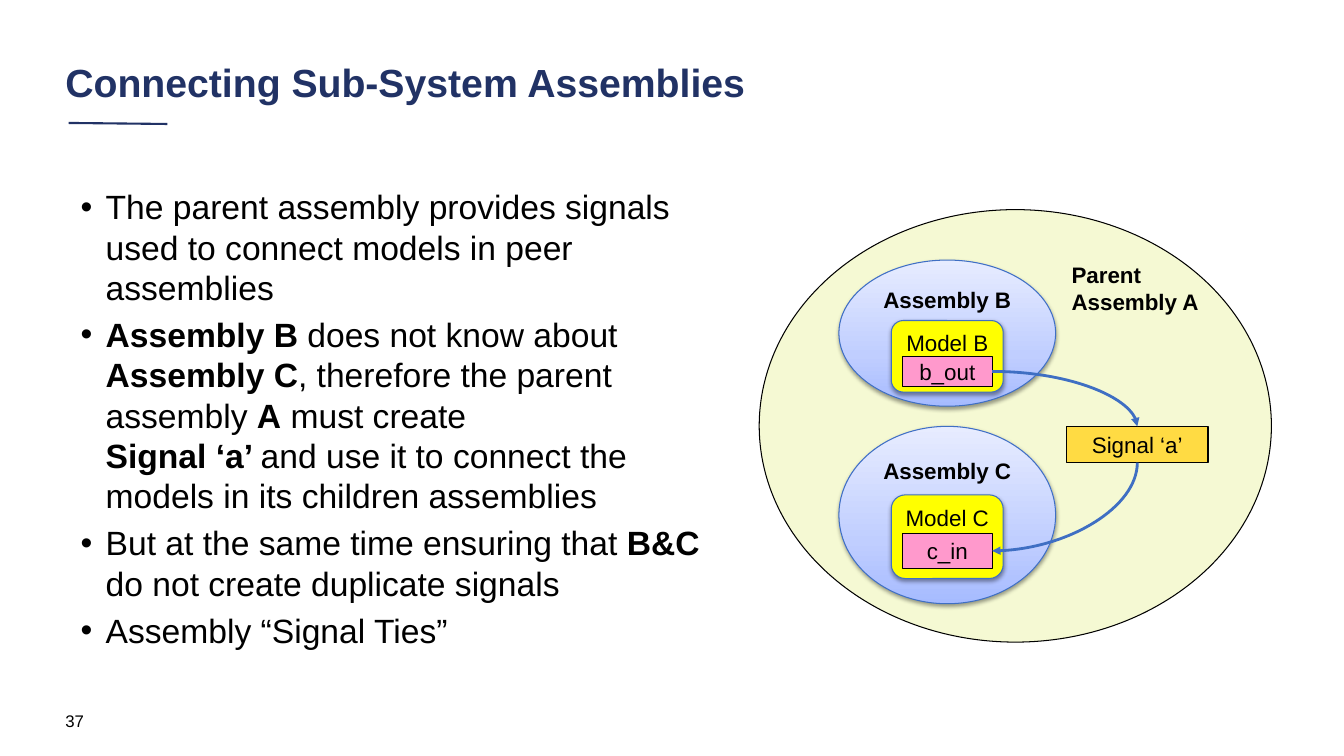
from lxml import etree
from pptx import Presentation
from pptx.dml.color import RGBColor
from pptx.enum import shapes, text
from pptx.oxml import ns
from pptx.util import Inches, Pt

NAVY = RGBColor(0x21, 0x32, 0x65)
BLACK = RGBColor(0, 0, 0)
BLUE = RGBColor(0x3F, 0x6F, 0xC3)
CREAM = RGBColor(0xF5, 0xF9, 0xD3)
GOLD = RGBColor(0xFF, 0xDB, 0x43)
YELLOW = RGBColor(0xFF, 0xFF, 0)
PINK = RGBColor(0xFF, 0x99, 0xCC)
GRADIENT = ((0, "A6BBFF"), (35, "C0CEFF"), (100, "E7ECFF"))
SHAPE = shapes.MSO_SHAPE
TOP, BOTTOM, RIGHT = 0, 2, 3

# Each bullet is a list of (text, bold) runs; "\n" is a line break
BULLETS = [
    [("The parent assembly provides signals used to connect models in peer assemblies", False)],
    [("Assembly B ", True), ("does not know about ", False), ("Assembly C", True),
     (", therefore the parent assembly ", False), ("A", True), (" must create ", False),
     ("\n", False), ("Signal ‘a’ ", True),
     ("and use it to connect the models in its children assemblies", False)],
    [("But at the same time ensuring that ", False), ("B&C", True),
     (" do not create duplicate signals", False)],
    [("Assembly “Signal Ties”", False)],
]


def add_xml(parent, tag, **attributes):
    return etree.SubElement(parent, ns.qn(tag), attributes)


def set_font(font, **values):
    font.name = "Arial"
    font.color.rgb = values.pop("color", BLACK)
    for name, value in values.items():
        setattr(font, name, value)


def add_text(slide, box, words, anchor=text.MSO_ANCHOR.TOP, **font):
    frame = slide.shapes.add_textbox(*map(Inches, box)).text_frame
    frame.word_wrap = True
    frame.vertical_anchor = anchor
    frame.text = words
    for paragraph in frame.paragraphs:
        set_font(paragraph.font, **font)
    return frame


def add_node(slide, kind, box, fill, line, width, label="",
             anchor=text.MSO_ANCHOR.MIDDLE, bold=False):
    shape = slide.shapes.add_shape(kind, *map(Inches, box))
    shape.shadow.inherit = False
    if fill is not None:
        shape.fill.solid()
        shape.fill.fore_color.rgb = fill
    shape.line.color.rgb = line
    shape.line.width = Pt(width)
    frame = shape.text_frame
    frame.margin_left = frame.margin_right = 0
    frame.word_wrap = True
    frame.vertical_anchor = anchor
    paragraph = frame.paragraphs[0]
    paragraph.alignment = text.PP_ALIGN.CENTER
    paragraph.text = label
    set_font(paragraph.font, size=Pt(16), bold=bold)
    return shape


def add_shadow(shape):
    effects = shape._element.spPr.find(ns.qn("a:effectLst"))
    shadow = add_xml(effects, "a:outerShdw", blurRad=str(Pt(3.1)), dist=str(Pt(1.6)),
                     dir="5400000", rotWithShape="0")
    color = add_xml(shadow, "a:srgbClr", val="000000")
    add_xml(color, "a:alpha", val="38000")


def add_gradient(shape):
    fill = etree.Element(ns.qn("a:gradFill"), rotWithShape="1")
    stops = add_xml(fill, "a:gsLst")
    for position, color in GRADIENT:
        stop = add_xml(stops, "a:gs", pos=str(position * 1000))
        add_xml(stop, "a:srgbClr", val=color)
    add_xml(fill, "a:lin", ang="16200000", scaled="0")
    shape._element.spPr.find(ns.qn("a:prstGeom")).addnext(fill)


def add_line(slide, kind, points, color, width):
    connector = slide.shapes.add_connector(kind, *map(Inches, points))
    connector.line.color.rgb = color
    connector.line.width = Pt(width)
    add_xml(connector._element.spPr, "a:effectLst")
    return connector


def add_signal_curve(slide, port, signal, side, arrow_tag):
    curve = add_line(slide, shapes.MSO_CONNECTOR.CURVE, (0, 0, 1, 1), BLUE, 2)
    curve.begin_connect(port, RIGHT)
    curve.end_connect(signal, side)
    # A quarter bend leaves the port sideways and meets the signal vertically
    properties = curve._element.spPr
    properties.find(ns.qn("a:prstGeom")).set("prst", "curvedConnector2")
    add_xml(properties.find(ns.qn("a:ln")), arrow_tag, type="triangle")


def add_header(slide, left, top, width, height):
    add_text(slide, (left, top, width, height), "Connecting Sub-System Assemblies",
             text.MSO_ANCHOR.MIDDLE, size=Pt(28), bold=True,
             color=NAVY).paragraphs[0].line_spacing = 0.9
    rule_y = top + height
    add_line(slide, shapes.MSO_CONNECTOR.STRAIGHT,
             (left + 0.13, rule_y, left + 1.11, rule_y + 0.01), NAVY, 1.5)


def add_bullets(slide, box):
    frame = add_text(slide, box, "")
    for index, runs in enumerate(BULLETS):
        paragraph = frame.add_paragraph() if index else frame.paragraphs[0]
        properties = paragraph._p.get_or_add_pPr()
        properties.set("marL", str(Inches(0.25)))
        properties.set("indent", str(Inches(-0.25)))
        if index:
            paragraph.space_before = Pt(4.8)
        for old in properties.findall(ns.qn("a:defRPr")):
            properties.remove(old)
        add_xml(properties, "a:buFont", typeface="Arial")
        add_xml(properties, "a:buChar", char="•")
        for words, bold in runs:
            if words == "\n":
                paragraph.add_line_break()
                continue
            run = paragraph.add_run()
            run.text = words
            set_font(run.font, size=Pt(24), bold=bold)


def add_assembly(slide, box, letter, port_name, model_y, model_height, port_y, port_height):
    left, top, width, _ = box
    centre = left + width / 2
    ellipse = add_node(slide, SHAPE.OVAL, box, None, BLUE, 0.75,
                       f"Assembly {letter}", text.MSO_ANCHOR.TOP, True)
    add_gradient(ellipse)
    model = add_node(slide, SHAPE.ROUNDED_RECTANGLE,
                     (centre - 0.555, top + model_y, 1.11, model_height),
                     YELLOW, BLUE, 0.75, f"Model {letter}", text.MSO_ANCHOR.TOP)
    for shape in (ellipse, model):
        add_shadow(shape)
    return add_node(slide, SHAPE.RECTANGLE,
                    (centre - 0.445, top + port_y, 0.89, port_height),
                    PINK, BLACK, 0.75, port_name)


def add_diagram(slide, left, top, width, height):
    # Parent assembly and the signal it owns
    add_node(slide, SHAPE.OVAL, (left, top, width, height), CREAM, BLACK, 0.75)
    signal = add_node(slide, SHAPE.RECTANGLE, (left + 3.05, top + 2.15, 1.4, 0.36),
                      GOLD, BLACK, 1, "Signal ‘a’")
    add_text(slide, (left + 3, top + 0.46, 1.66, 0.64), "Parent\vAssembly A",
             size=Pt(16), bold=True)

    # Child assemblies with their model ports
    child_left = left + 0.79
    output_port = add_assembly(slide, (child_left, top + 0.5, 2.15, 1.45),
                               "B", "b_out", 0.6, 0.71, 0.96, 0.29)
    input_port = add_assembly(slide, (child_left, top + 2.15, 2.15, 1.76),
                              "C", "c_in", 0.68, 0.83, 1.06, 0.35)

    # Signal flow from b_out through the signal to c_in
    add_signal_curve(slide, output_port, signal, TOP, "a:tailEnd")
    add_signal_curve(slide, input_port, signal, BOTTOM, "a:headEnd")


def main():
    presentation = Presentation()
    presentation.slide_width, presentation.slide_height = Inches(13.33), Inches(7.5)
    slide = presentation.slides.add_slide(presentation.slide_layouts[6])
    add_header(slide, 0.55, 0.46, 11.12, 0.76)
    add_bullets(slide, (0.7, 1.8, 6.45, 4.86))
    add_diagram(slide, 7.53, 2.08, 5.08, 4.29)
    add_text(slide, (0.55, 6.95, 3, 0.4), "37", text.MSO_ANCHOR.MIDDLE, size=Pt(12))
    presentation.save("out.pptx")


if __name__ == "__main__":
    main()
